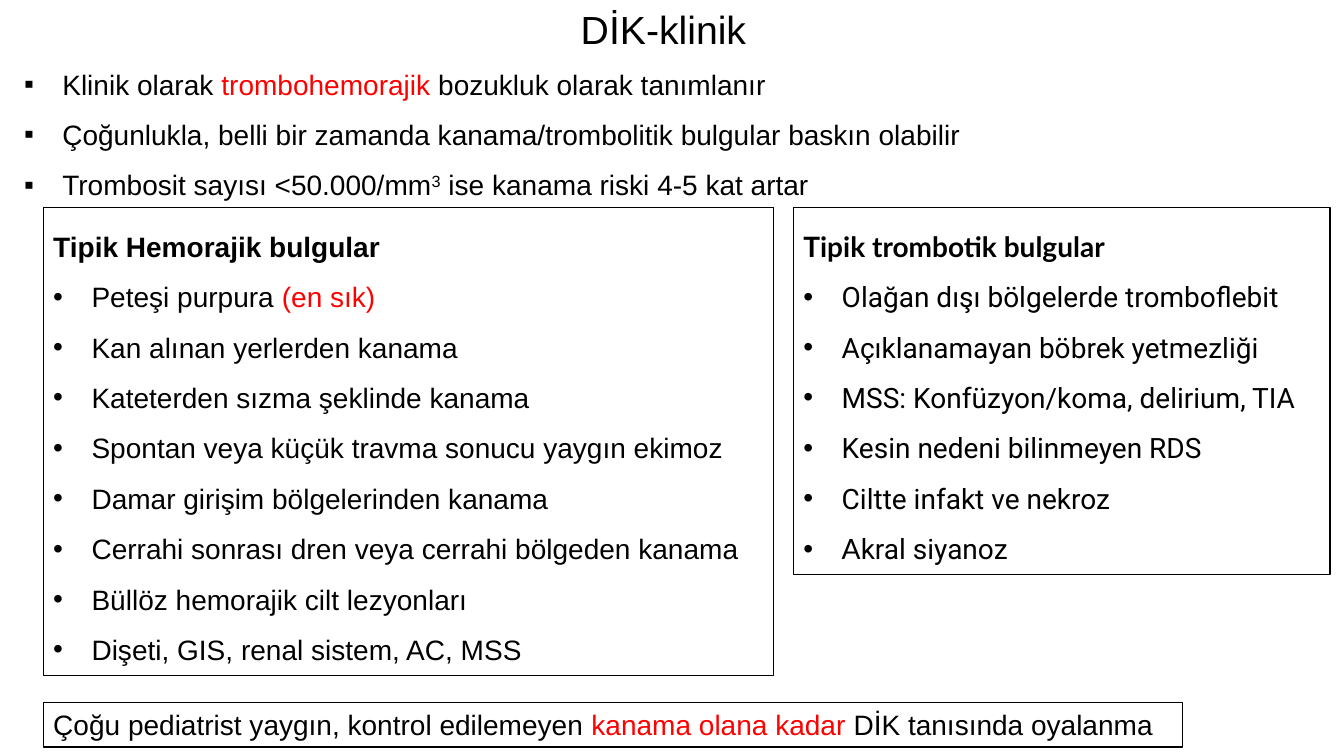
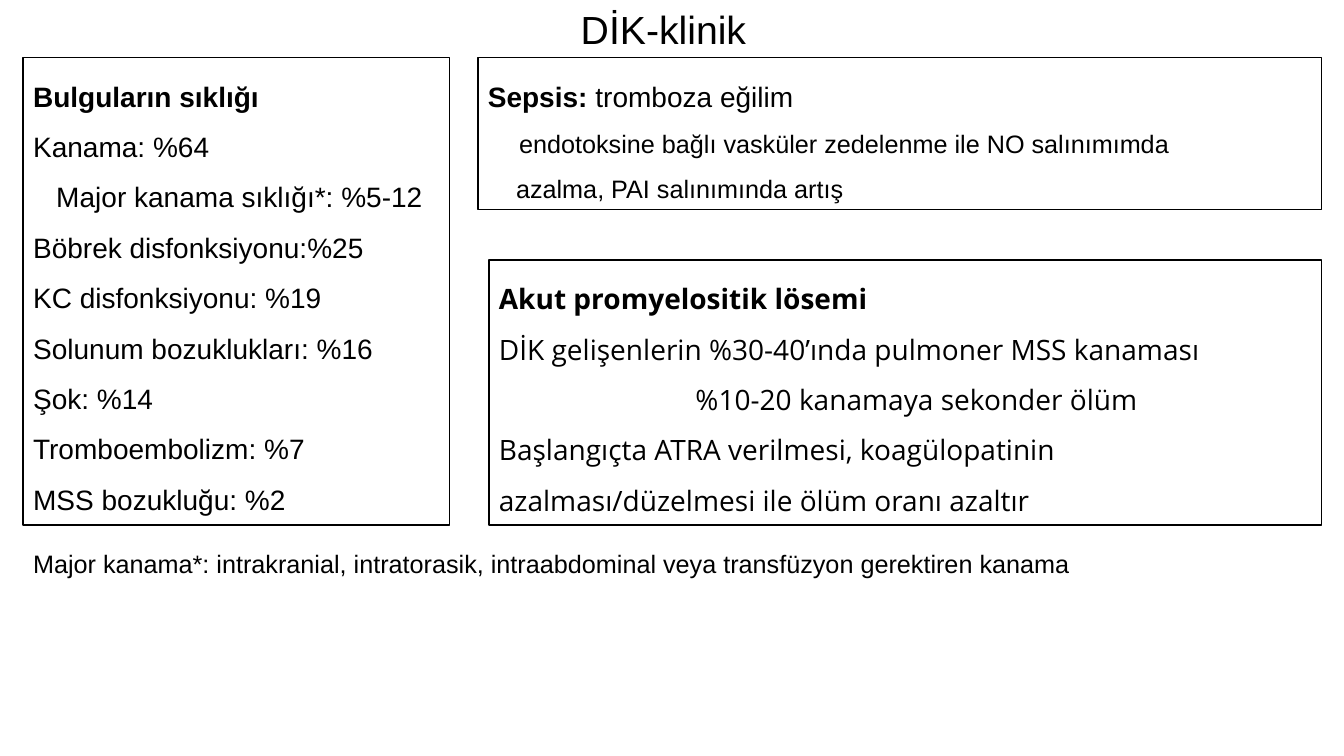
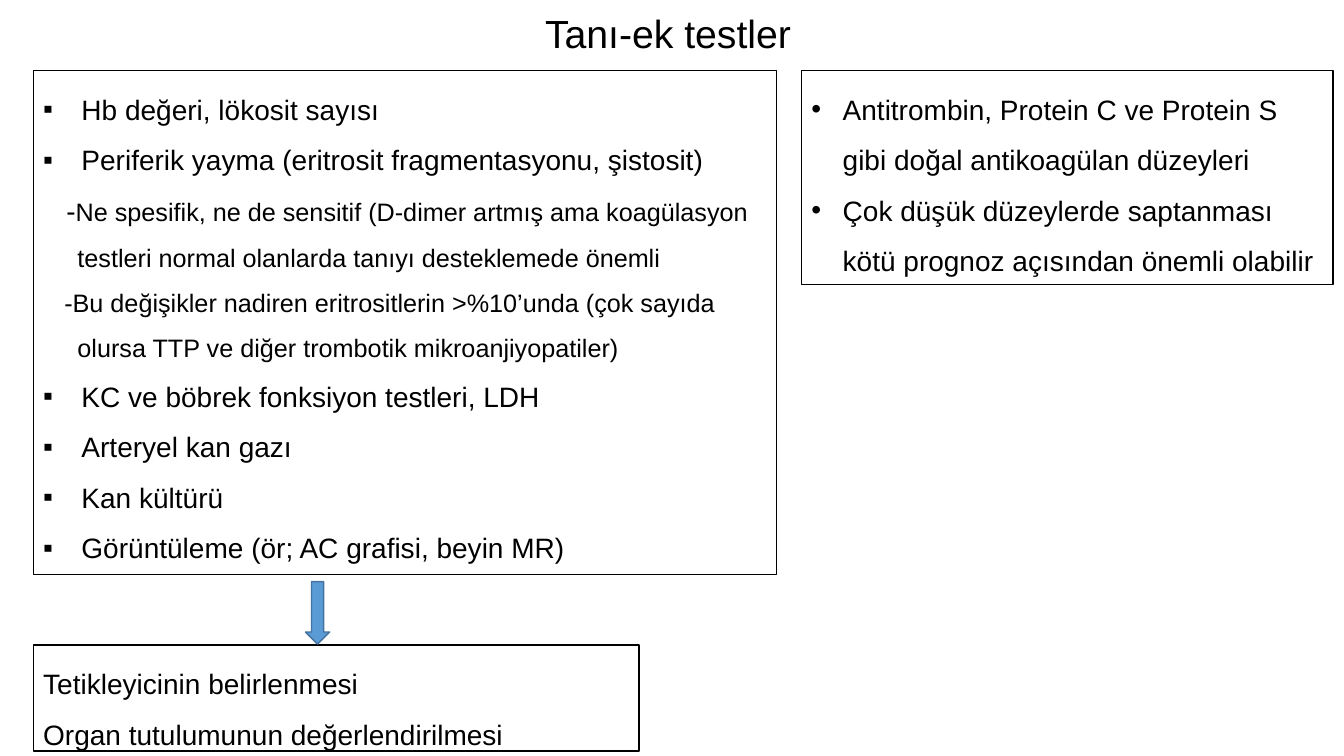
import lxml.etree
import pptx
import pptx.dml.color
import pptx.enum.shapes
import pptx.enum.text
import pptx.oxml.ns
import pptx.util

PX = 9144
WIDE, HIGH = 1333, 750
FONT = "Arial"
HUES = {
    "ink": "000000",
    "red": "FF0000",
    "paper": "FFFFFF",
    "arrow": "5B9BD5",
    "edge": "43739E",
}
SHAPES = pptx.enum.shapes.MSO_SHAPE
ALIGN = pptx.enum.text.PP_ALIGN


def px(num):
    return pptx.util.Emu(num * PX)


def hue(name):
    return pptx.dml.color.RGBColor.from_string(HUES[name])


def line(*runs, mark=None, hang=38, left=0, gap=1.5, align=ALIGN.LEFT, **style):
    return {"runs": runs, "mark": mark, "hang": hang, "left": left,
            "gap": gap, "align": align, "style": style}


def points(mark, *texts, **opts):
    return [line(text, mark=mark, **opts) for text in texts]


def red(text):
    return text, {"color": "red"}


def bold(text, **style):
    return text, {"bold": True, **style}


def add_run(para, item, base):
    text, own = (item, {}) if isinstance(item, str) else item
    style = {"font": FONT, "size": 20, "color": "ink", "bold": False, **base, **own}
    run = para.add_run()
    run.text = text
    font = run.font
    font.name = style["font"]
    font.size = pptx.util.Pt(style["size"])
    font.bold = style["bold"]
    font.color.rgb = hue(style["color"])
    if style.get("raised"):
        run._r.get_or_add_rPr().set("baseline", "30000")


def indent(para, mark, hang, left):
    props = para._p.get_or_add_pPr()
    props.set("marL", str(px(hang if mark else left)))
    props.set("indent", str(px(-hang if mark else 0)))
    if mark:
        qn = pptx.oxml.ns.qn
        lxml.etree.SubElement(props, qn("a:buFont"), typeface=FONT)
        lxml.etree.SubElement(props, qn("a:buChar"), char=mark)


def write(shape, lines, font=FONT):
    frame = shape.text_frame
    frame.word_wrap = True
    frame.auto_size = pptx.enum.text.MSO_AUTO_SIZE.SHAPE_TO_FIT_TEXT
    frame.vertical_anchor = pptx.enum.text.MSO_ANCHOR.TOP
    for num, row in enumerate(lines):
        para = frame.add_paragraph() if num else frame.paragraphs[0]
        para.alignment = row["align"]
        para.line_spacing = row["gap"]
        indent(para, row["mark"], row["hang"], row["left"])
        for item in row["runs"]:
            add_run(para, item, {"font": font, **row["style"]})


def add_text(slide, area, lines):
    write(slide.shapes.add_textbox(*map(px, area)), lines)


def add_block(slide, kind, area, fill, edge):
    shape = slide.shapes.add_shape(kind, *map(px, area))
    shape.shadow.inherit = False
    shape.fill.solid()
    shape.fill.fore_color.rgb = hue(fill)
    shape.line.color.rgb = hue(edge)
    shape.line.width = pptx.util.Pt(1)
    return shape


def add_card(slide, area, lines, font=FONT):
    write(add_block(slide, SHAPES.RECTANGLE, area, "paper", "ink"), lines, font)


def add_slide(deck, title, area=(23, 0, 1270, 57)):
    slide = deck.slides.add_slide(deck.slide_layouts[6])
    add_text(slide, area, [line(title, size=28, gap=1.0, align=ALIGN.CENTER)])
    return slide


def signs(deck):
    slide = add_slide(deck, "DİK-klinik")
    add_text(slide, (14, 45, 1270, 263), [
        line("Klinik olarak ", red("trombohemorajik "),
             "bozukluk olarak tanımlanır", mark="▪"),
        line("Çoğunlukla, belli bir zamanda kanama/trombolitik bulgular baskın olabilir",
             mark="▪"),
        line("Trombosit sayısı <50.000/mm", ("3", {"raised": True}),
             " ise kanama riski 4-5 kat artar", mark="▪"),
    ])
    add_card(slide, (43, 206, 724, 464), [
        line(bold("Tipik Hemorajik bulgular")),
        line("Peteşi purpura ", red("(en sık)"), mark="•"),
        *points("•",
                "Kan alınan yerlerden kanama",
                "Kateterden sızma şeklinde kanama",
                "Spontan veya küçük travma sonucu yaygın ekimoz",
                "Damar girişim bölgelerinden kanama",
                "Cerrahi sonrası dren veya cerrahi bölgeden kanama",
                "Büllöz hemorajik cilt lezyonları",
                "Dişeti, GIS, renal sistem, AC, MSS"),
    ])
    add_card(slide, (787, 206, 532, 364), [
        line(bold("Tipik trombotik bulgular", font="Lato")),
        *points("•",
                "Olağan dışı bölgelerde tromboflebit",
                "Açıklanamayan böbrek yetmezliği",
                "MSS: Konfüzyon/koma, delirium, TIA",
                "Kesin nedeni bilinmeyen RDS",
                "Ciltte infakt ve nekroz"),
        line(("A", {"font": "Lato"}), "kral siyanoz", mark="•"),
    ], "Roboto")
    add_card(slide, (43, 697, 1130, 44), [
        line("Çoğu pediatrist yaygın, kontrol edilemeyen ", red("kanama olana kadar "),
             "DİK tanısında oyalanma", gap=1.0),
    ])


def rates(deck):
    slide = add_slide(deck, "DİK-klinik")
    add_card(slide, (23, 57, 423, 464), [
        line(bold("Bulguların sıklığı")),
        line("Kanama: %64"),
        line("Major kanama sıklığı*: %5-12", left=23),
        *points(None,
                "Böbrek disfonksiyonu:%25",
                "KC disfonksiyonu: %19",
                "Solunum bozuklukları: %16",
                "Şok: %14",
                "Tromboembolizm: %7",
                "MSS bozukluğu: %2"),
    ])
    add_text(slide, (23, 539, 1225, 40), [
        line("Major kanama*: intrakranial, intratorasik, intraabdominal veya "
             "transfüzyon gerektiren kanama", size=18, gap=1.0),
    ])
    add_card(slide, (474, 57, 837, 151), [
        line(bold("Sepsis: "), "tromboza eğilim"),
        line("endotoksine bağlı vasküler zedelenme ile NO salınımımda", left=31, size=18),
        line("azalma, PAI salınımında artış", left=28, size=18),
    ])
    add_card(slide, (485, 258, 826, 263), [
        line(bold("Akut promyelositik lösemi")),
        line("DİK gelişenlerin %30-40’ında pulmoner MSS kanaması"),
        line("%10-20 kanamaya sekonder ölüm", left=195),
        line("Başlangıçta ATRA verilmesi, koagülopatinin "
             "azalması/düzelmesi ile ölüm oranı azaltır"),
    ], "Open Sans")


def tests(deck):
    slide = add_slide(deck, "Tanı-ek testler", (22, 4, 1281, 57))
    add_card(slide, (33, 70, 737, 500), [
        *points("▪",
                "Hb değeri, lökosit sayısı",
                "Periferik yayma (eritrosit fragmentasyonu, şistosit)"),
        line(("-", {"size": 20}),
             "Ne spesifik, ne de sensitif (D-dimer artmış ama koagülasyon",
             left=23, size=18),
        line("testleri normal olanlarda tanıyı desteklemede önemli", left=34, size=18),
        line("-Bu değişikler nadiren eritrositlerin >%10’unda (çok sayıda",
             left=21, size=18),
        line("olursa TTP ve diğer trombotik mikroanjiyopatiler)", left=34, size=18),
        *points("▪",
                "KC ve böbrek fonksiyon testleri, LDH",
                "Arteryel kan gazı",
                "Kan kültürü",
                "Görüntüleme (ör; AC grafisi, beyin MR)"),
    ])
    add_card(slide, (33, 640, 601, 105), points(
        None,
        "Tetikleyicinin belirlenmesi",
        "Organ tutulumunun değerlendirilmesi"))
    add_card(slide, (795, 70, 527, 212), points(
        "•",
        "Antitrombin, Protein C ve Protein S gibi doğal antikoagülan düzeyleri",
        "Çok düşük düzeylerde saptanması kötü prognoz açısından önemli olabilir",
        hang=31))
    add_block(slide, SHAPES.DOWN_ARROW, (303, 577, 24, 62), "arrow", "edge")


def main():
    deck = pptx.Presentation()
    deck.slide_width, deck.slide_height = px(WIDE), px(HIGH)
    for build in (signs, rates, tests):
        build(deck)
    deck.save("out.pptx")


if __name__ == "__main__":
    main()
